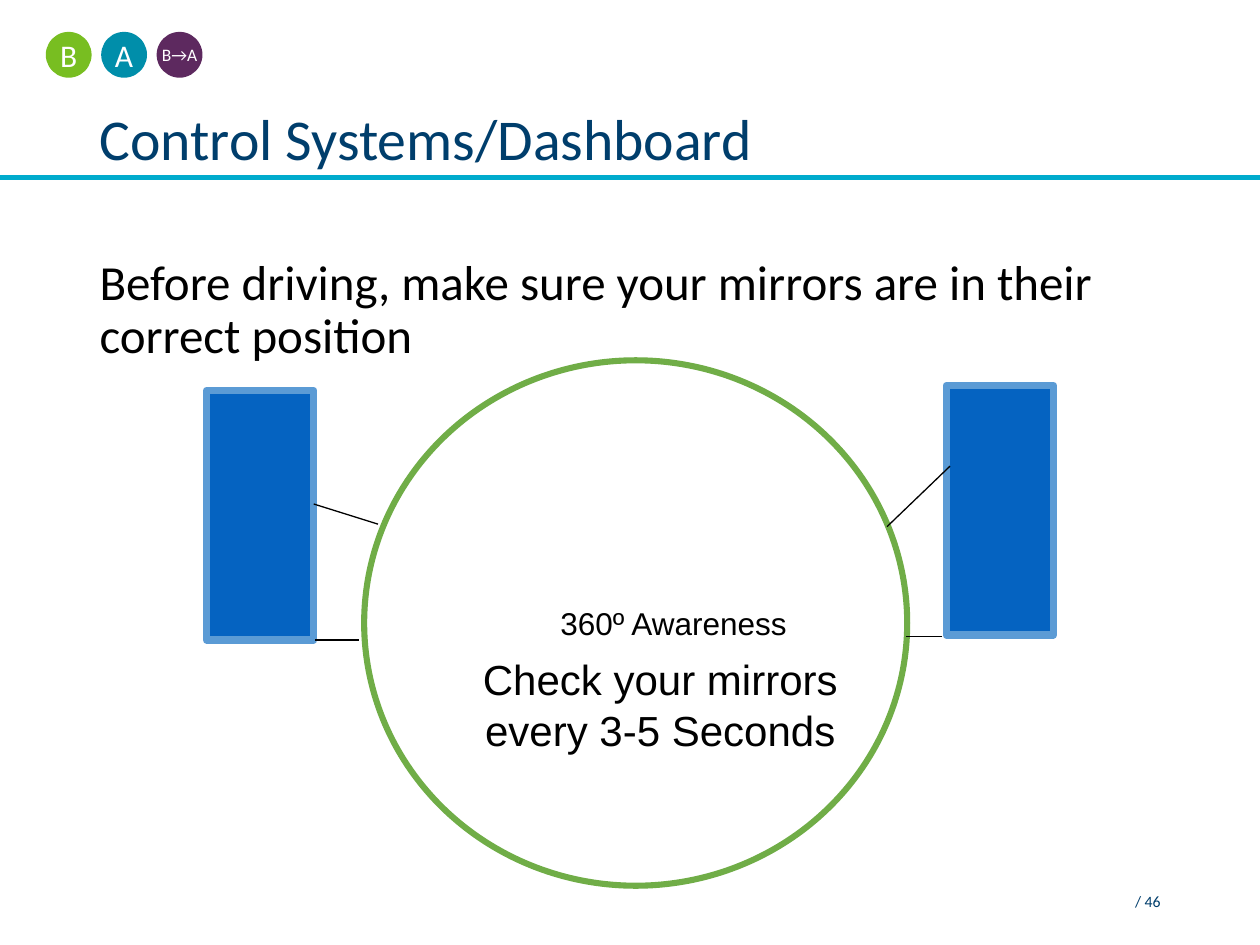
from lxml import etree
from pptx import Presentation
from pptx.dml.color import RGBColor
from pptx.enum.shapes import MSO_CONNECTOR, MSO_SHAPE
from pptx.enum.text import MSO_ANCHOR, MSO_AUTO_SIZE, PP_ALIGN
from pptx.oxml.ns import qn
from pptx.util import Inches, Pt

STRAIGHT = MSO_CONNECTOR.STRAIGHT
RECTANGLE, OVAL = MSO_SHAPE.RECTANGLE, MSO_SHAPE.OVAL
TOP, MIDDLE = MSO_ANCHOR.TOP, MSO_ANCHOR.MIDDLE
LEFT, CENTER, RIGHT = PP_ALIGN.LEFT, PP_ALIGN.CENTER, PP_ALIGN.RIGHT
NO_FIT = MSO_AUTO_SIZE.NONE
NAVY, BLACK, WHITE = "003E6C", "000000", "FFFFFF"


def color(hex_value):
    return RGBColor.from_string(hex_value)


def place(shape, box):
    shape.left, shape.top, shape.width, shape.height = map(Inches, box)


def add_run(paragraph, text, size, font, hex_value):
    run = paragraph.add_run()
    run.text = text
    run.font.size = Pt(size)
    run.font.name = font
    run.font.color.rgb = color(hex_value)


def format_frame(shape, anchor, alignment, wrap=True):
    frame = shape.text_frame
    frame.auto_size = NO_FIT
    frame.word_wrap = wrap
    frame.vertical_anchor = anchor
    paragraph = frame.paragraphs[0]
    paragraph.alignment = alignment
    return paragraph


def add_figure(slide, preset, box, fill, line, line_width):
    shape = slide.shapes.add_shape(preset, *map(Inches, box))
    shape.shadow.inherit = False
    if fill:
        shape.fill.solid()
        shape.fill.fore_color.rgb = color(fill)
    else:
        shape.fill.background()
    shape.line.color.rgb = color(line)
    shape.line.width = Pt(line_width)
    return shape


def add_line(slide, start, end, hex_value, width):
    connector = slide.shapes.add_connector(STRAIGHT, *map(Inches, (*start, *end)))
    connector.line.color.rgb = color(hex_value)
    connector.line.width = Pt(width)
    etree.SubElement(connector._element.spPr, qn("a:effectLst"))


def add_heading(slide, box):
    title = slide.shapes.title
    place(title, box)
    paragraph = format_frame(title, MIDDLE, LEFT)
    paragraph.line_spacing = 0.9
    add_run(paragraph, "Control Systems/Dashboard", 33, "Calibri", NAVY)
    add_line(slide, (0, 1.41), (10, 1.41), "00ABCD", 3)


def add_body(slide, box):
    body = slide.placeholders[1]
    place(body, box)
    paragraph = format_frame(body, TOP, LEFT)
    properties = paragraph._p.get_or_add_pPr()
    properties.set("marL", "0")
    properties.set("indent", "0")
    etree.SubElement(properties, qn("a:buNone"))
    paragraph.line_spacing = 0.9
    paragraph.space_before = Pt(0)
    add_run(
        paragraph,
        "Before driving, make sure your mirrors are in their correct position",
        28, "Calibri", BLACK,
    )


def add_badges(slide, left, top):
    diameter, step = 0.35, 0.44
    badges = [("B", 18, "78BE21"), ("A", 18, "008EAA"), ("B→A", 10, "5D295F")]
    for index, (label, size, fill) in enumerate(badges):
        box = (left + index * step, top, diameter, diameter)
        badge = add_figure(slide, OVAL, box, fill, fill, 1)
        frame = badge.text_frame
        frame.margin_left = frame.margin_right = 0
        frame.margin_top = frame.margin_bottom = 0
        paragraph = format_frame(badge, MIDDLE, CENTER, wrap=False)
        add_run(paragraph, label, size, "Calibri", WHITE)


def add_mirror_diagram(slide, left, top):
    for x, y in [(0, 0.24), (5.87, 0.2)]:
        box = (left + x, top + y, 0.85, 1.98)
        add_figure(slide, RECTANGLE, box, "0563C1", "5B9BD5", 4.25)

    circle_box = (left + 1.25, top, 4.31, 4.17)
    circle = add_figure(slide, OVAL, circle_box, None, "70AD47", 3.5)
    circle.text_frame.margin_left = Inches(0.7)
    paragraph = format_frame(circle, MIDDLE, CENTER)
    add_run(paragraph, "360º Awareness", 18, "Arial", BLACK)

    arms = [
        ((0.85, 1.14), (1.36, 1.3)),
        ((0.86, 2.22), (1.21, 2.22)),
        ((5.84, 2.19), (5.55, 2.19)),
        ((5.4, 1.32), (5.9, 0.84)),
    ]
    for (x1, y1), (x2, y2) in arms:
        add_line(slide, (left + x1, top + y1), (left + x2, top + y2), BLACK, 0.75)

    reminder_box = (left + 1.6, top + 2.28, 4, 0.91)
    reminder = slide.shapes.add_textbox(*map(Inches, reminder_box))
    paragraph = format_frame(reminder, TOP, CENTER)
    add_run(paragraph, "Check your mirrors", 24, "Arial", BLACK)
    paragraph.add_line_break()
    add_run(paragraph, "every 3-5 Seconds", 24, "Arial", BLACK)


def add_page_count(slide, box):
    page_count = slide.shapes.add_textbox(*map(Inches, box))
    paragraph = format_frame(page_count, MIDDLE, RIGHT)
    add_run(paragraph, "/ 46", 9, "Calibri", NAVY)


def main():
    presentation = Presentation()
    presentation.slide_width = Inches(10)
    presentation.slide_height = Inches(7.5)
    slide = presentation.slides.add_slide(presentation.slide_layouts[1])
    add_heading(slide, (0.69, 0.4, 8.62, 1.45))
    add_body(slide, (0.69, 2, 8.62, 4.76))
    add_mirror_diagram(slide, 1.64, 2.86)
    add_badges(slide, 0.37, 0.26)
    add_page_count(slide, (7.06, 6.95, 2.25, 0.4))
    presentation.save("out.pptx")


if __name__ == "__main__":
    main()
